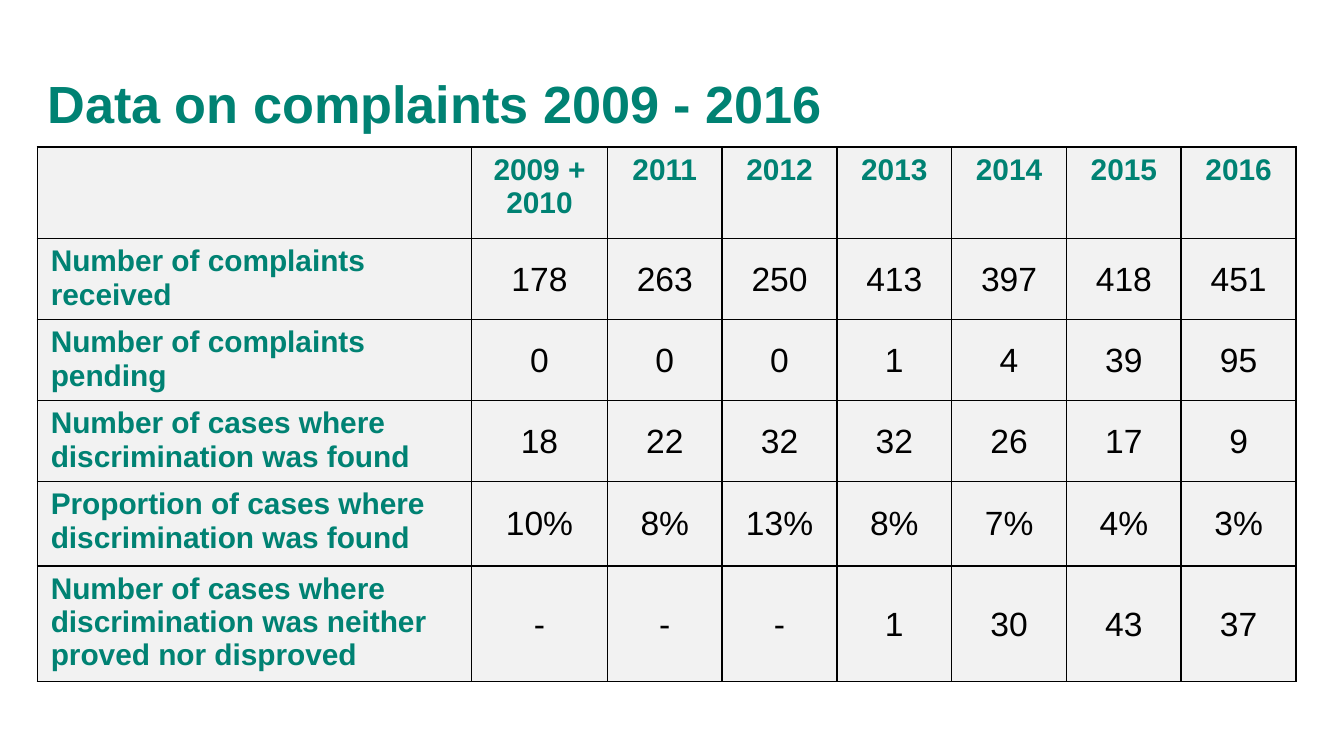
from dataclasses import dataclass

from lxml.etree import SubElement
from pptx import Presentation
from pptx.dml.color import RGBColor as RGB
from pptx.enum.text import MSO_ANCHOR as Anchor, PP_ALIGN as Align
from pptx.oxml.ns import qn
from pptx.util import Pt


@dataclass(frozen=True)
class Theme:
    font: str = "Arial"
    green: str = "008273"
    black: str = "000000"
    grey: str = "F2F2F2"
    title: int = 28
    label: int = 16
    value: int = 18
    line: int = 1


THEME = Theme()
ROWS = [
    ["", "2009 + 2010", "2011", "2012", "2013", "2014", "2015", "2016"],
    ["Number of complaints received", "178", "263", "250", "413", "397", "418", "451"],
    ["Number of complaints pending", "0", "0", "0", "1", "4", "39", "95"],
    ["Number of cases where discrimination was found",
     "18", "22", "32", "32", "26", "17", "9"],
    ["Proportion of cases where discrimination was found",
     "10%", "8%", "13%", "8%", "7%", "4%", "3%"],
    ["Number of cases where discrimination was neither proved nor disproved",
     "-", "-", "-", "1", "30", "43", "37"],
]
HEIGHTS = [49, 43.4, 43.4, 43.4, 45.4, 61.8]
WIDTHS = [232.6, 72.8] + [61.5] * 6


def style(para, size, color, bold):
    for run in para.runs:
        font = run.font
        font.name, font.size, font.bold = THEME.font, Pt(size), bold
        font.color.rgb = RGB.from_string(color)


def frame(cell):
    """Draw a thin line on all four sides of a cell."""
    props = cell._tc.get_or_add_tcPr()
    for at, side in enumerate(("a:lnL", "a:lnR", "a:lnT", "a:lnB")):
        line = SubElement(props, qn(side), w=str(Pt(THEME.line)))
        fill = SubElement(line, qn("a:solidFill"))
        SubElement(fill, qn("a:srgbClr"), val=THEME.black)
        props.insert(at, line)


def add_title(slide, text, left, top, width, height):
    box = slide.shapes.add_textbox(Pt(left), Pt(top), Pt(width), Pt(height))
    body = box.text_frame
    body.word_wrap = True
    body.vertical_anchor = Anchor.MIDDLE
    body.margin_left = body.margin_right = body.margin_top = body.margin_bottom = 0
    body.text = text
    style(body.paragraphs[0], THEME.title, THEME.green, True)


def fill_cell(cell, text, row, col):
    """Set a cell as a green label in the first row or column, else as a value."""
    cell.fill.solid()
    cell.fill.fore_color.rgb = RGB.from_string(THEME.grey)
    frame(cell)
    cell.text = text
    para = cell.text_frame.paragraphs[0]
    para.alignment = Align.CENTER if col else Align.LEFT
    if row and col:
        cell.vertical_anchor = Anchor.MIDDLE
        cell.margin_left = cell.margin_right = cell.margin_top = Pt(0.7)
        cell.margin_bottom = 0
        style(para, THEME.value, THEME.black, False)
    else:
        style(para, THEME.label, THEME.green, True)


def add_grid(slide, rows, left, top, width, height):
    """Place the table, sharing the box out in the ratio of WIDTHS and HEIGHTS."""
    table = slide.shapes.add_table(
        len(rows), len(rows[0]), Pt(left), Pt(top), Pt(width), Pt(height)).table
    table.first_row = table.horz_banding = False
    for col, part in zip(table.columns, WIDTHS):
        col.width = Pt(width * part / sum(WIDTHS))
    for row, part in zip(table.rows, HEIGHTS):
        row.height = Pt(height * part / sum(HEIGHTS))
    for r, texts in enumerate(rows):
        for c, text in enumerate(texts):
            fill_cell(table.cell(r, c), text, r, c)


def main():
    deck = Presentation()
    deck.slide_width, deck.slide_height = Pt(720), Pt(405)
    slide = deck.slides.add_slide(deck.slide_layouts[6])
    add_grid(slide, ROWS, 20, 78.7, 674.4, 286.4)
    add_title(slide, "Data on complaints 2009 - 2016", 25.4, 32.4, 488, 45)
    deck.save("out.pptx")


if __name__ == "__main__":
    main()
